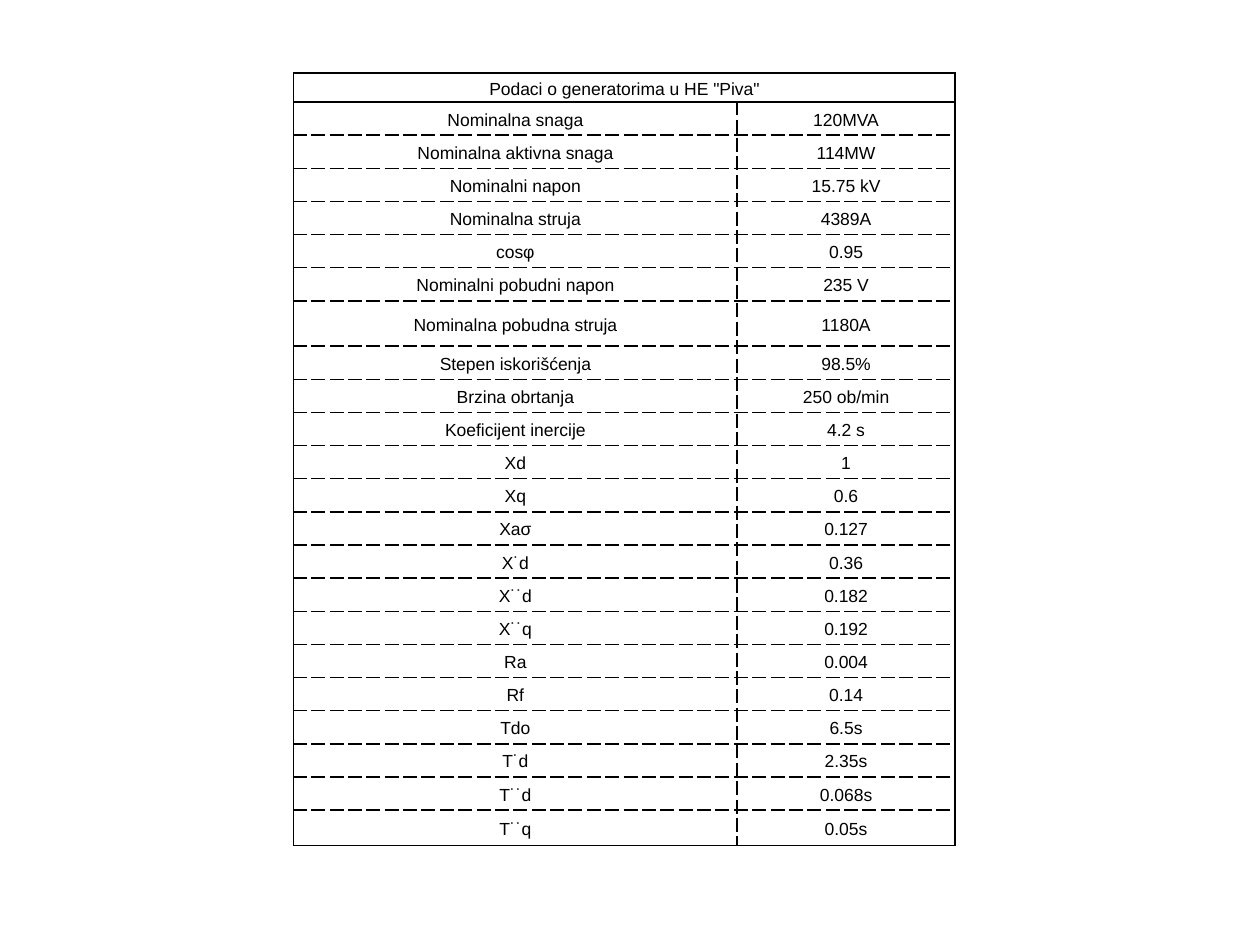
"""Build a slide with a table of generator data for a hydro power plant."""
from lxml import etree
from pptx import Presentation
from pptx.dml.color import RGBColor
from pptx.enum.text import MSO_ANCHOR, PP_ALIGN
from pptx.oxml.ns import qn
from pptx.util import Inches, Pt

CENTER = PP_ALIGN.CENTER
MIDDLE = MSO_ANCHOR.MIDDLE
BLACK = "000000"

TITLE = 'Podaci o generatorima u HE "Piva"'
DATA = [
    ("Nominalna snaga", "120MVA"),
    ("Nominalna aktivna snaga", "114MW"),
    ("Nominalni napon", "15.75 kV"),
    ("Nominalna struja", "4389A"),
    ("cosφ", "0.95"),
    ("Nominalni pobudni napon", "235 V"),
    ("Nominalna pobudna struja", "1180A"),
    ("Stepen iskorišćenja", "98.5%"),
    ("Brzina obrtanja", "250 ob/min"),
    ("Koeficijent inercije", "4.2 s"),
    ("Xd", "1"),
    ("Xq", "0.6"),
    ("Xaσ", "0.127"),
    ("X˙d", "0.36"),
    ("X˙˙d", "0.182"),
    ("X˙˙q", "0.192"),
    ("Ra", "0.004"),
    ("Rf", "0.14"),
    ("Tdo", "6.5s"),
    ("T˙d", "2.35s"),
    ("T˙˙d", "0.068s"),
    ("T˙˙q", "0.05s"),
]
LEFT, TOP, HEIGHT = 2.33, 0.58, 6.13
COL_WIDTHS = (3.52, 1.73)
SPECIAL_HEIGHTS = {0: 0.23, 7: 0.36, len(DATA): 0.28}


def rgb(value):
    """Return a colour from a hex string."""
    return RGBColor.from_string(value)


def add_border(cell, side, dash):
    """Draw one black border of a cell."""
    ln = etree.SubElement(cell._tc.get_or_add_tcPr(), qn(f"a:ln{side}"), w=str(Pt(1)))
    fill = etree.SubElement(ln, qn("a:solidFill"))
    etree.SubElement(fill, qn("a:srgbClr"), val=BLACK)
    etree.SubElement(ln, qn("a:prstDash"), val=dash)


def format_cell(cell, text, dashes):
    """Set the text, margins, borders and fill of a cell."""
    cell.text = text
    cell.vertical_anchor = MIDDLE
    cell.margin_left = cell.margin_right = Inches(0.07)
    cell.margin_top = cell.margin_bottom = 0
    p = cell.text_frame.paragraphs[0]
    p.alignment = CENTER
    p.line_spacing = 1.15
    for r in p.runs:
        r.font.name = "Arial"
        r.font.size = Pt(10)
        r.font.color.rgb = rgb(BLACK)
    for side, dash in dashes.items():
        add_border(cell, side, dash)
    cell.fill.background()


def border_dashes(row, col):
    """Return solid outer and header borders and dashed inner ones."""
    solid = {
        "L": row == 0 or col == 0,
        "R": row == 0 or col == 1,
        "T": row <= 1,
        "B": row in (0, len(DATA)),
    }
    return {side: "solid" if on else "dash" for side, on in solid.items()}


def main():
    """Create and save the presentation."""
    prs = Presentation()
    prs.slide_width, prs.slide_height = Inches(10), Inches(7.5)
    s = prs.slides.add_slide(prs.slide_layouts[6])

    rows = [(TITLE, ""), *DATA]
    row_height = (HEIGHT - sum(SPECIAL_HEIGHTS.values())) / (len(rows) - len(SPECIAL_HEIGHTS))
    table = s.shapes.add_table(
        len(rows), 2, Inches(LEFT), Inches(TOP), Inches(sum(COL_WIDTHS)), Inches(HEIGHT)
    ).table
    table.first_row = table.horz_banding = False
    for column, width in zip(table.columns, COL_WIDTHS):
        column.width = Inches(width)
    table.cell(0, 0).merge(table.cell(0, 1))

    for i, texts in enumerate(rows):
        table.rows[i].height = Inches(SPECIAL_HEIGHTS.get(i, row_height))
        for j, text in enumerate(texts):
            format_cell(table.cell(i, j), text, border_dashes(i, j))
    prs.save("out.pptx")


if __name__ == "__main__":
    main()
